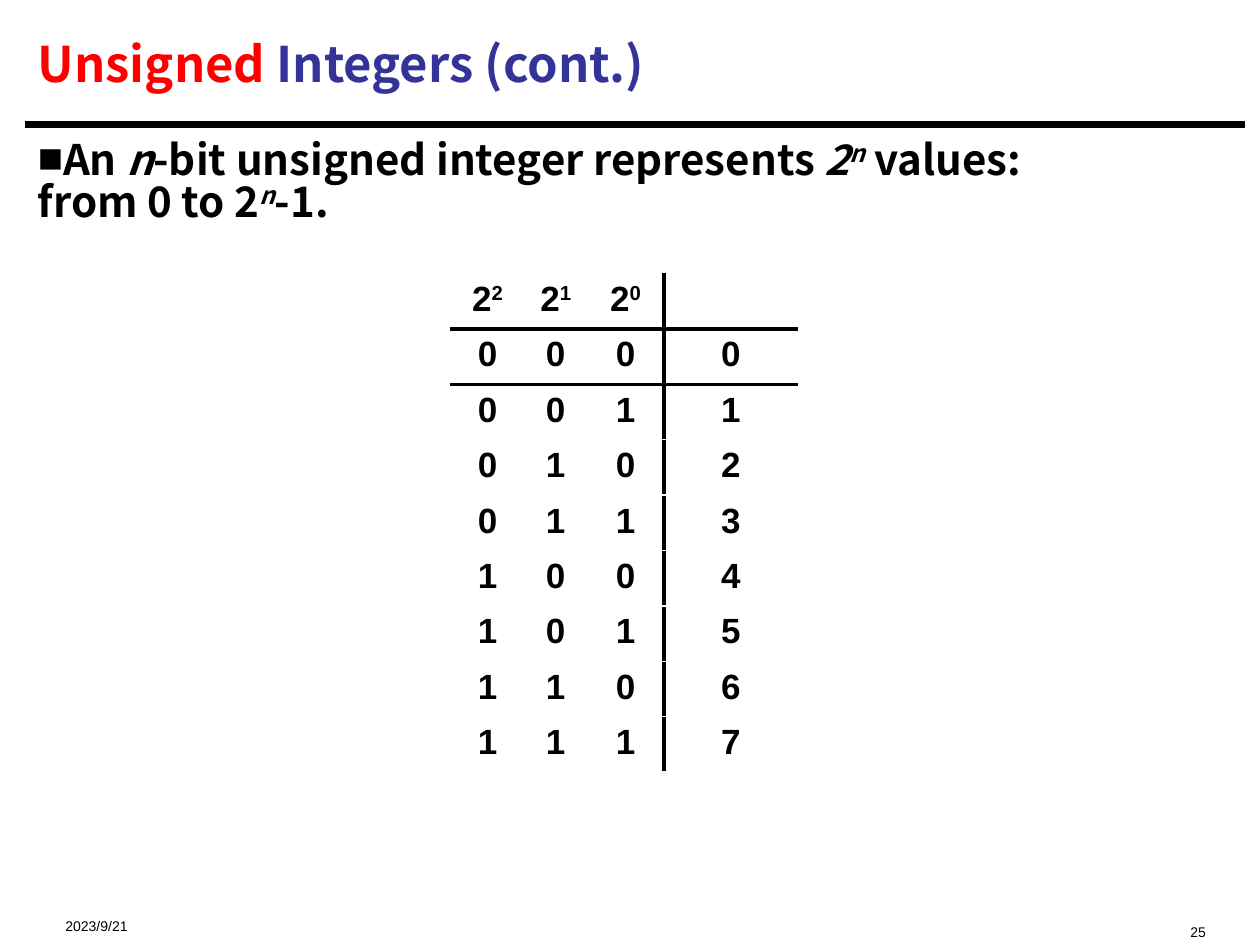
"""Build the slide on unsigned integers with its table of 3-bit values."""
from typing import NamedTuple

from lxml import etree
from pptx import Presentation, util as u
from pptx.dml.color import RGBColor
from pptx.enum import shapes, text
from pptx.oxml.ns import qn

BLACK = RGBColor(0, 0, 0)
RED = RGBColor(0xFF, 0, 0)
BLUE = RGBColor(0x33, 0x33, 0x99)
SANS = "Noto Sans CJK SC"
ARIAL = "Arial"
LEFT, CENTER, RIGHT = text.PP_ALIGN.LEFT, text.PP_ALIGN.CENTER, text.PP_ALIGN.RIGHT
MIDDLE, TOP = text.MSO_ANCHOR.MIDDLE, text.MSO_ANCHOR.TOP
BITS = 3
WIDTHS = (0.58, 0.5, 0.61, 1.06)
HIGH = 0.44


class Box(NamedTuple):
    left: float
    top: float
    width: float
    height: float


class Note(NamedTuple):
    words: str
    box: Box
    align: text.PP_ALIGN


NOTES = (
    Note("2023/9/21", Box(0.42, 7.21, 2.5, 0.27), LEFT),
    Note("25", Box(6.67, 7.26, 3, 0.27), RIGHT),
)


def write(para, words: str, *, size: float, font: str = ARIAL,
          color: RGBColor = BLACK, bold: bool = True,
          slant: bool = False, raised: bool = False) -> None:
    """Add one run of text in the given format."""
    run = para.add_run()
    run.text = words
    face = run.font
    face.name, face.size, face.bold, face.italic = font, u.Pt(size), bold, slant
    face.color.rgb = color
    if raised:
        run._r.get_or_add_rPr().set("baseline", "30000")


def place(shape, box: Box, anchor: text.MSO_ANCHOR):
    """Move a text shape and return its first paragraph."""
    shape.left, shape.top, shape.width, shape.height = map(u.Inches, box)
    frame = shape.text_frame
    frame.word_wrap = True
    frame.auto_size = text.MSO_AUTO_SIZE.NONE
    frame.vertical_anchor = anchor
    return frame.paragraphs[0]


def rule(slide) -> None:
    """Draw the heavy line below the title."""
    line = slide.shapes.add_connector(
        shapes.MSO_CONNECTOR.STRAIGHT, *map(u.Inches, (0.2, 0.99, 9.88, 0.99)))
    line.line.color.rgb = BLACK
    line.line.width = u.Pt(3.75)
    etree.SubElement(line._element.spPr, qn("a:effectLst"))


def head(slide) -> None:
    """Fill the title."""
    para = place(slide.shapes.title, Box(0.2, 0.08, 9.67, 0.84), MIDDLE)
    para.alignment = LEFT
    write(para, "Unsigned", size=28, font=SANS, color=RED)
    write(para, " Integers (cont.)", size=28, font=SANS, color=BLUE)


def body(slide) -> None:
    """Fill the bulleted statement."""
    para = place(slide.placeholders[1], Box(0.2, 1.07, 9.67, 5.99), TOP)
    para.line_spacing = 0.84
    para.space_before = u.Pt(2)
    props = para._p.get_or_add_pPr()
    props.set("marL", "0")
    props.set("indent", "0")
    etree.SubElement(props, qn("a:buFont")).set("typeface", ARIAL)
    etree.SubElement(props, qn("a:buChar")).set("char", "■")
    look = {"size": 24, "font": SANS}
    write(para, "An ", **look)
    write(para, "n", slant=True, **look)
    write(para, "-bit unsigned integer represents ", **look)
    write(para, "2", slant=True, **look)
    write(para, "n", slant=True, raised=True, **look)
    write(para, " values:", **look)
    para.add_line_break()
    write(para, "from 0 to 2", **look)
    write(para, "n", slant=True, raised=True, **look)
    write(para, "-1.", **look)


def edge(cell, side: str) -> None:
    """Draw a black border on one side of a cell."""
    line = etree.SubElement(cell._tc.get_or_add_tcPr(), qn(f"a:ln{side}"))
    line.set("w", str(u.Pt(2.25)))
    fill = etree.SubElement(line, qn("a:solidFill"))
    etree.SubElement(fill, qn("a:srgbClr")).set("val", str(BLACK))


def grid(slide) -> None:
    """Add the table of bit patterns and their values."""
    count = 2 ** BITS + 1
    box = Box(3.58, 2.17, sum(WIDTHS), HIGH * count)
    table = slide.shapes.add_table(count, len(WIDTHS), *map(u.Inches, box)).table
    table.first_row = table.horz_banding = False
    for col, width in zip(table.columns, WIDTHS):
        col.width = u.Inches(width)
    for r, row in enumerate(table.rows):
        row.height = u.Inches(HIGH)
        for c, cell in enumerate(row.cells):
            lines = {"L": c == BITS, "R": c == BITS - 1, "T": r == 1, "B": r == 0}
            for side, shown in lines.items():
                if shown:
                    edge(cell, side)
            cell.fill.background()
            para = cell.text_frame.paragraphs[0]
            para.alignment = CENTER
            if r:
                value = r - 1
                digit = value if c == BITS else value >> (BITS - 1 - c) & 1
                write(para, str(digit), size=20)
            elif c < BITS:
                write(para, "2", size=20)
                write(para, str(BITS - 1 - c), size=20, raised=True)


def main() -> None:
    """Build and save the slide."""
    deck = Presentation()
    deck.slide_width, deck.slide_height = u.Inches(10), u.Inches(7.5)
    slide = deck.slides.add_slide(deck.slide_layouts[1])
    rule(slide)
    for note in NOTES:
        shape = slide.shapes.add_textbox(*map(u.Inches, note.box))
        para = place(shape, note.box, MIDDLE)
        para.alignment = note.align
        write(para, note.words, size=8, bold=False)
    head(slide)
    body(slide)
    grid(slide)
    deck.save("out.pptx")


if __name__ == "__main__":
    main()
